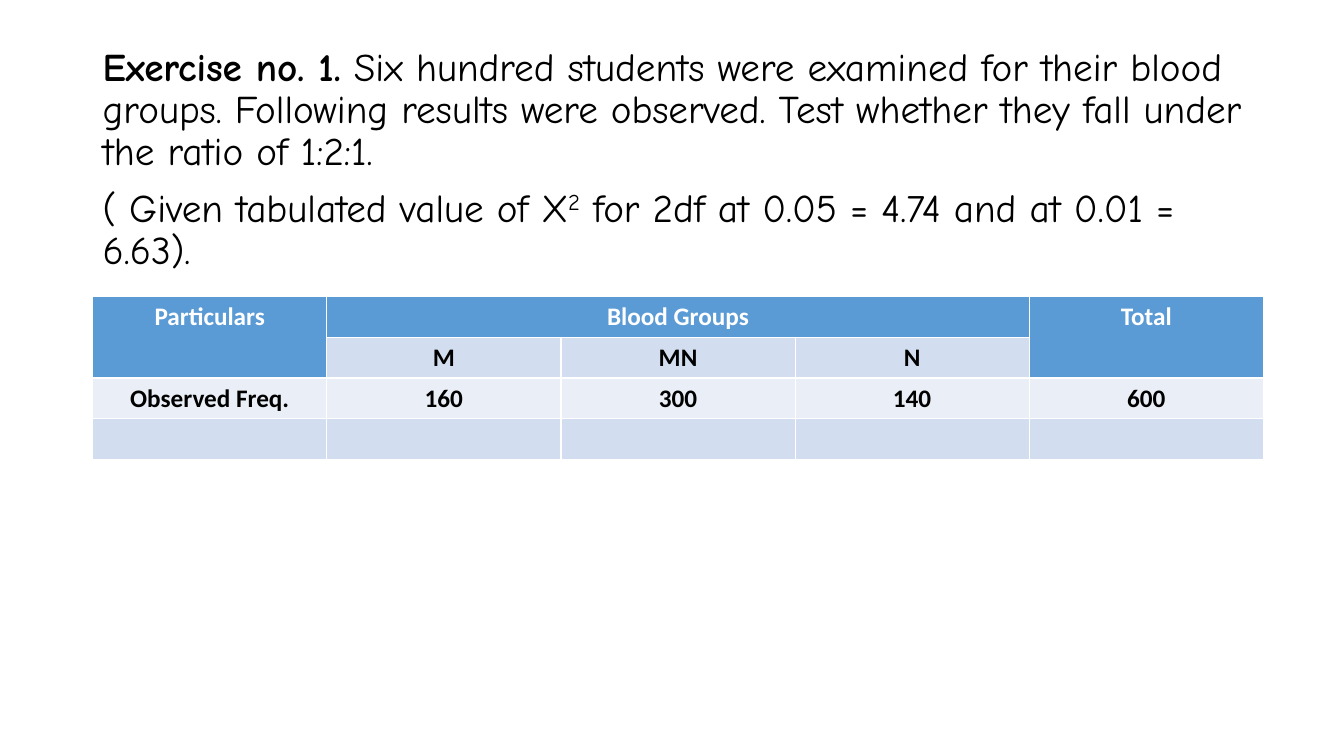
from dataclasses import dataclass

from pptx import Presentation, util as u
from pptx.dml import color
from pptx.enum import text


@dataclass(frozen=True)
class Box:
    """A frame in percent of the slide's width and height."""
    left: float
    top: float
    width: float
    height: float

    def place(self) -> tuple[int, int, int, int]:
        """Return the frame as slide lengths."""
        return (int(WIDE * self.left / 100), int(HIGH * self.top / 100),
                int(WIDE * self.width / 100), int(HIGH * self.height / 100))


@dataclass(frozen=True)
class Part:
    """A stretch of text in one style."""
    words: str
    bold: bool = False
    raised: bool = False


@dataclass(frozen=True)
class Entry:
    """A table cell with its grid place, span and colours."""
    row: int
    col: int
    words: str
    fill: str
    ink: str = "000000"
    rows: int = 1
    cols: int = 1


WIDE, HIGH = u.Inches(13.33), u.Inches(7.5)
ROWS, COLS = 4, 5
BLUE, PALE, LIGHT, WHITE = "5B9BD5", "D2DEEF", "EAEFF7", "FFFFFF"
TASK = Box(6.9, 5.6, 86.27, 84.53)
GRID = Box(6.9, 39.2, 87.1, 21.6)

LINES = [
    [Part("Exercise no. 1.", bold=True),
     Part(" Six hundred students were examined for their blood groups. Following "
          "results were observed. Test whether they fall under the ratio of 1:2:1.")],
    [Part("( Given tabulated value of X"), Part("2", raised=True),
     Part(" for 2df at 0.05 = 4.74 and at 0.01 = 6.63).")],
]
HEADS = [
    Entry(0, 0, "Particulars", BLUE, WHITE, rows=2),
    Entry(0, 1, "Blood Groups", BLUE, WHITE, cols=3),
    Entry(0, 4, "Total", BLUE, WHITE, rows=2),
]
GROUPS = [Entry(1, col, name, PALE) for col, name in enumerate(["M", "MN", "N"], 1)]
COUNTS = [Entry(2, col, value, LIGHT) for col, value in
          enumerate(["Observed Freq.", "160", "300", "140", "600"])]
BLANKS = [Entry(3, col, "", PALE) for col in range(COLS)]


def paint(code: str) -> color.RGBColor:
    """Turn a hex string into a colour."""
    return color.RGBColor.from_string(code)


def style(font, name: str, size: float, ink: str, bold: bool) -> None:
    """Set the face, size, colour and weight of a font."""
    font.name, font.size, font.bold = name, u.Pt(size), bold
    font.color.rgb = paint(ink)


def write(slide, box: Box, lines: list[list[Part]]) -> None:
    """Add the task text."""
    frame = slide.shapes.add_textbox(*box.place()).text_frame
    frame.word_wrap = True
    for num, parts in enumerate(lines):
        para = frame.add_paragraph() if num else frame.paragraphs[0]
        para.line_spacing = 0.9
        para.space_before = u.Pt(10 if num else 0)
        for part in parts:
            run = para.add_run()
            run.text = part.words
            style(run.font, "Comic Neue", 28, "000000", part.bold)
            if part.raised:
                run._r.get_or_add_rPr().set("baseline", "30000")


def fill(table, entry: Entry) -> None:
    """Merge, colour and label one cell."""
    cell = table.cell(entry.row, entry.col)
    if entry.rows * entry.cols > 1:
        cell.merge(table.cell(entry.row + entry.rows - 1, entry.col + entry.cols - 1))
    cell.fill.solid()
    cell.fill.fore_color.rgb = paint(entry.fill)
    if entry.words:
        para = cell.text_frame.paragraphs[0]
        para.text = entry.words
        para.alignment = text.PP_ALIGN.CENTER
        style(para.runs[0].font, "Calibri", 18, entry.ink, True)


def chart(slide, box: Box, entries: list[Entry]) -> None:
    """Add the table of blood groups."""
    table = slide.shapes.add_table(ROWS, COLS, *box.place()).table
    for entry in entries:
        fill(table, entry)


def main() -> None:
    """Build and save the slide."""
    deck = Presentation()
    deck.slide_width, deck.slide_height = WIDE, HIGH
    slide = deck.slides.add_slide(deck.slide_layouts[6])
    write(slide, TASK, LINES)
    chart(slide, GRID, HEADS + GROUPS + COUNTS + BLANKS)
    deck.save("out.pptx")


if __name__ == "__main__":
    main()
